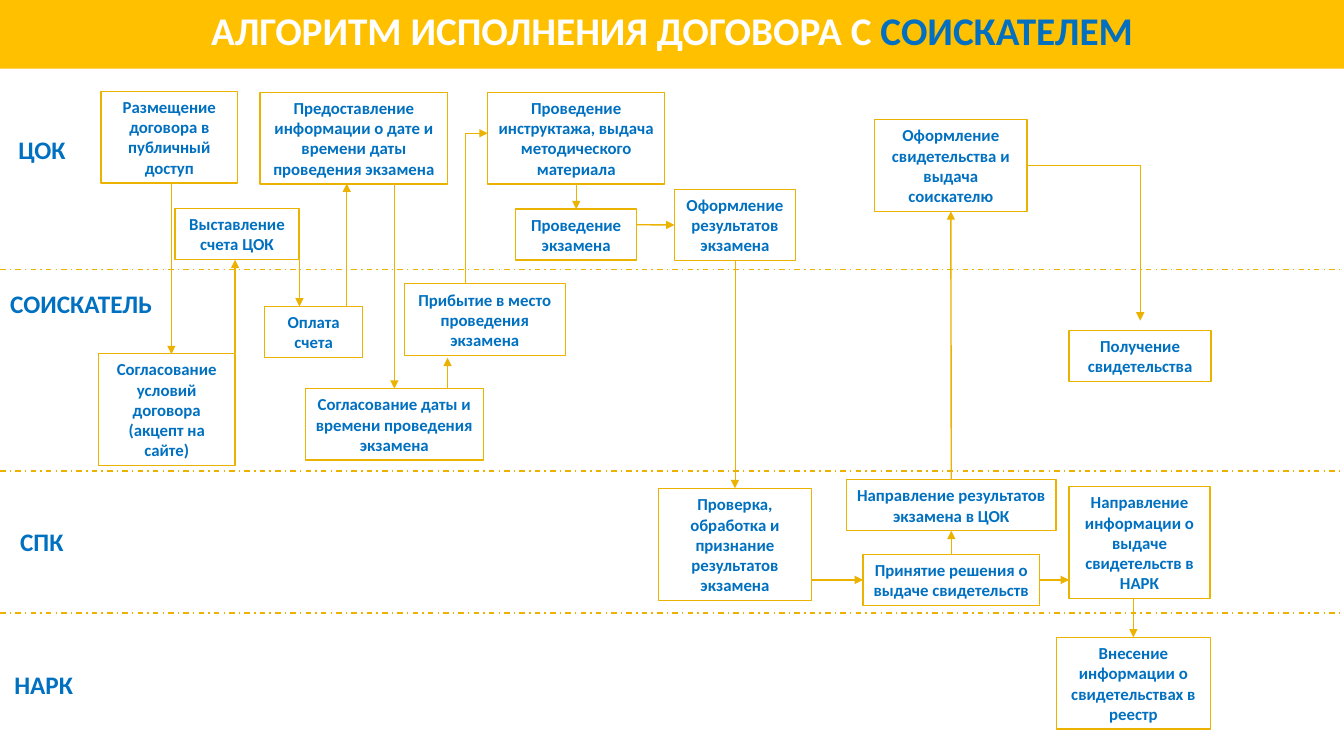
from typing import NamedTuple

from lxml.etree import SubElement
from pptx import Presentation
from pptx.dml.color import RGBColor
from pptx.enum.dml import MSO_LINE
from pptx.enum.shapes import MSO_CONNECTOR, MSO_SHAPE
from pptx.enum.text import MSO_ANCHOR, MSO_AUTO_SIZE, PP_ALIGN
from pptx.oxml.ns import qn
from pptx.util import Pt

BLUE, GOLD, AMBER, WHITE = "0070C0", "EBB200", "FFC000", "FFFFFF"
FONT = "Calibri"
TOP, LEFT, BOTTOM, RIGHT = range(4)


class Lane(NamedTuple):
    text: str
    mid: float
    top: float
    width: float


class Step(NamedTuple):
    name: str
    text: str
    left: float
    top: float
    width: float
    rows: int
    weight: float = 1


class Point(NamedTuple):
    x: float
    y: float


class Join(NamedTuple):
    name: str
    side: int


class Link(NamedTuple):
    start: Point | Join
    end: Point | Join
    weight: float = 1
    arrow: bool = True


LANES = [
    Lane("ЦОК", 30, 92.5, 60),
    Lane("СОИСКАТЕЛЬ", 58, 202.5, 116),
    Lane("СПК", 29.9, 372.6, 59),
    Lane("НАРК", 31.2, 474.5, 60),
]
RULES = [192.7, 336.4, 438]

STEPS = [
    Step("publish", "Размещение договора в публичный доступ", 72.2, 65.2, 97.6, 4),
    Step("accept", "Согласование условий договора (акцепт на сайте)", 70.3, 252.4, 97.6, 5),
    Step("inform", "Предоставление информации о дате и времени даты проведения экзамена",
         185.8, 65.9, 134, 4),
    Step("brief", "Проведение инструктажа, выдача методического материала",
         348.4, 65.9, 126.4, 4),
    Step("exam", "Проведение экзамена", 368.4, 149.4, 86.4, 2),
    Step("result", "Оформление результатов экзамена", 481.8, 135.2, 86.4, 3),
    Step("bill", "Выставление счета ЦОК", 125, 149, 88.6, 2),
    Step("check", "Проверка, обработка и признание результатов\nэкзамена",
         470.3, 348.8, 109.4, 5),
    Step("decide", "Принятие решения о выдаче свидетельств", 616.5, 396, 126, 2),
    Step("send", "Направление результатов экзамена в ЦОК", 604.6, 342.7, 149.8, 2),
    Step("notice", "Направление информации о выдаче свидетельств в НАРК",
         763.6, 347.4, 100.8, 5),
    Step("issue", "Оформление свидетельства и выдача соискателю", 624.8, 85.4, 108.8, 4),
    Step("receive", "Получение свидетельства", 763.6, 236.2, 101.5, 2),
    Step("enter", "Внесение информации о свидетельствах в реестр", 754.6, 455.3, 110, 4),
    Step("pay", "Оплата счета", 189.2, 218.9, 69.8, 2, 0.75),
    Step("date", "Согласование даты и времени проведения экзамена",
         218, 277.6, 127.4, 3, 0.75),
    Step("arrive", "Прибытие в место проведения экзамена", 288.7, 202.7, 115.2, 3, 0.75),
]

LINKS = [
    Link(Point(122.4, 131.2), Point(122.4, 253)),
    Link(Point(167.9, 252.4), Point(167.9, 185.6)),
    Link(Point(213.9, 185.6), Point(213.9, 218.9)),
    Link(Point(247.7, 218.9), Point(247.7, 131.2)),
    Link(Join("brief", BOTTOM), Join("exam", TOP)),
    Link(Point(454.8, 160.5), Join("result", LEFT)),
    Link(Point(579.7, 414.2), Join("decide", LEFT)),
    Link(Join("decide", TOP), Join("send", BOTTOM)),
    Link(Join("send", TOP), Join("issue", BOTTOM)),
    Link(Join("decide", RIGHT), Point(763.6, 414.2)),
    Link(Point(809.6, 427.6), Join("enter", TOP)),
    Link(Point(281.7, 131.2), Join("date", TOP), 0.5),
    Link(Point(319.7, 277.6), Point(319.7, 255.5), 0.5),
    Link(Point(332.3, 95.2), Point(348.4, 95.2), 0.5),
    Link(Point(332.3, 95.2), Point(332.3, 202.7), 0.5, False),
    Link(Join("result", BOTTOM), Join("check", TOP), 0.5),
    Link(Join("issue", RIGHT), Point(814.5, 118.2), 0.5, False),
    Link(Point(814.5, 118.2), Point(814.5, 229), 0.5),
]


def color(code: str) -> RGBColor:
    return RGBColor.from_string(code)


def style(frame, size: float, code: str = BLUE) -> None:
    for para in frame.paragraphs:
        para.alignment = PP_ALIGN.CENTER
        for run in para.runs:
            run.font.name = FONT
            run.font.size = Pt(size)
            run.font.bold = True
            run.font.color.rgb = color(code)


def add_lane(shapes, lane: Lane) -> None:
    box = shapes.add_textbox(Pt(lane.mid - lane.width / 2), Pt(lane.top),
                             Pt(lane.width), Pt(29))
    frame = box.text_frame
    frame.word_wrap = True
    frame.margin_left = frame.margin_right = Pt(0)
    frame.text = lane.text
    style(frame, 18)


def add_step(shapes, step: Step):
    height = 7.2 + 14.6 * step.rows
    box = shapes.add_shape(MSO_SHAPE.RECTANGLE, Pt(step.left), Pt(step.top),
                           Pt(step.width), Pt(height))
    box.shadow.inherit = False
    box.fill.background()
    box.line.color.rgb = color(GOLD)
    box.line.width = Pt(step.weight)
    frame = box.text_frame
    frame.word_wrap = True
    frame.auto_size = MSO_AUTO_SIZE.SHAPE_TO_FIT_TEXT
    frame.text = step.text
    style(frame, 12)
    return box


def add_line(shapes, start: Point, end: Point, weight: float):
    line = shapes.add_connector(MSO_CONNECTOR.STRAIGHT, Pt(start.x), Pt(start.y),
                                Pt(end.x), Pt(end.y))
    line.line.color.rgb = color(GOLD)
    line.line.width = Pt(weight)
    SubElement(line.element.spPr, qn("a:effectLst"))
    return line


def add_link(shapes, link: Link, boxes: dict) -> None:
    ends = [Point(0, 0) if isinstance(end, Join) else end
            for end in (link.start, link.end)]
    line = add_line(shapes, *ends, link.weight)
    if isinstance(link.start, Join):
        line.begin_connect(boxes[link.start.name], link.start.side)
    if isinstance(link.end, Join):
        line.end_connect(boxes[link.end.name], link.end.side)
    if link.arrow:
        SubElement(line.line._get_or_add_ln(), qn("a:tailEnd"), type="triangle")


def add_title(slide) -> None:
    band = slide.shapes.add_shape(MSO_SHAPE.RECTANGLE, Pt(0), Pt(0), Pt(960), Pt(49))
    band.shadow.inherit = False
    band.fill.solid()
    band.fill.fore_color.rgb = color(AMBER)
    band.line.fill.background()
    title = slide.shapes.title
    title.left, title.top, title.width, title.height = Pt(126), Pt(0), Pt(708), Pt(47)
    frame = title.text_frame
    frame.text = "АЛГОРИТМ ИСПОЛНЕНИЯ ДОГОВОРА С "
    frame.word_wrap = True
    frame.auto_size = MSO_AUTO_SIZE.NONE
    frame.vertical_anchor = MSO_ANCHOR.MIDDLE
    para = frame.paragraphs[0]
    para.line_spacing = 0.9
    para.add_run().text = "СОИСКАТЕЛЕМ"
    style(frame, 28, WHITE)
    para.runs[1].font.color.rgb = color("036FC0")
    slide.shapes.element.append(title.element)  # bring in front of the band


def main() -> None:
    deck = Presentation()
    deck.slide_width, deck.slide_height = Pt(960), Pt(540)
    slide = deck.slides.add_slide(deck.slide_layouts[5])
    shapes = slide.shapes
    add_title(slide)

    # Lanes
    for lane in LANES:
        add_lane(shapes, lane)
    for y in RULES:
        rule = add_line(shapes, Point(0, y), Point(960, y), 1)
        rule.line.dash_style = MSO_LINE.DASH_DOT

    # Steps and the links between them
    boxes = {step.name: add_step(shapes, step) for step in STEPS}
    for link in LINKS:
        add_link(shapes, link, boxes)
    deck.save("out.pptx")


if __name__ == "__main__":
    main()
